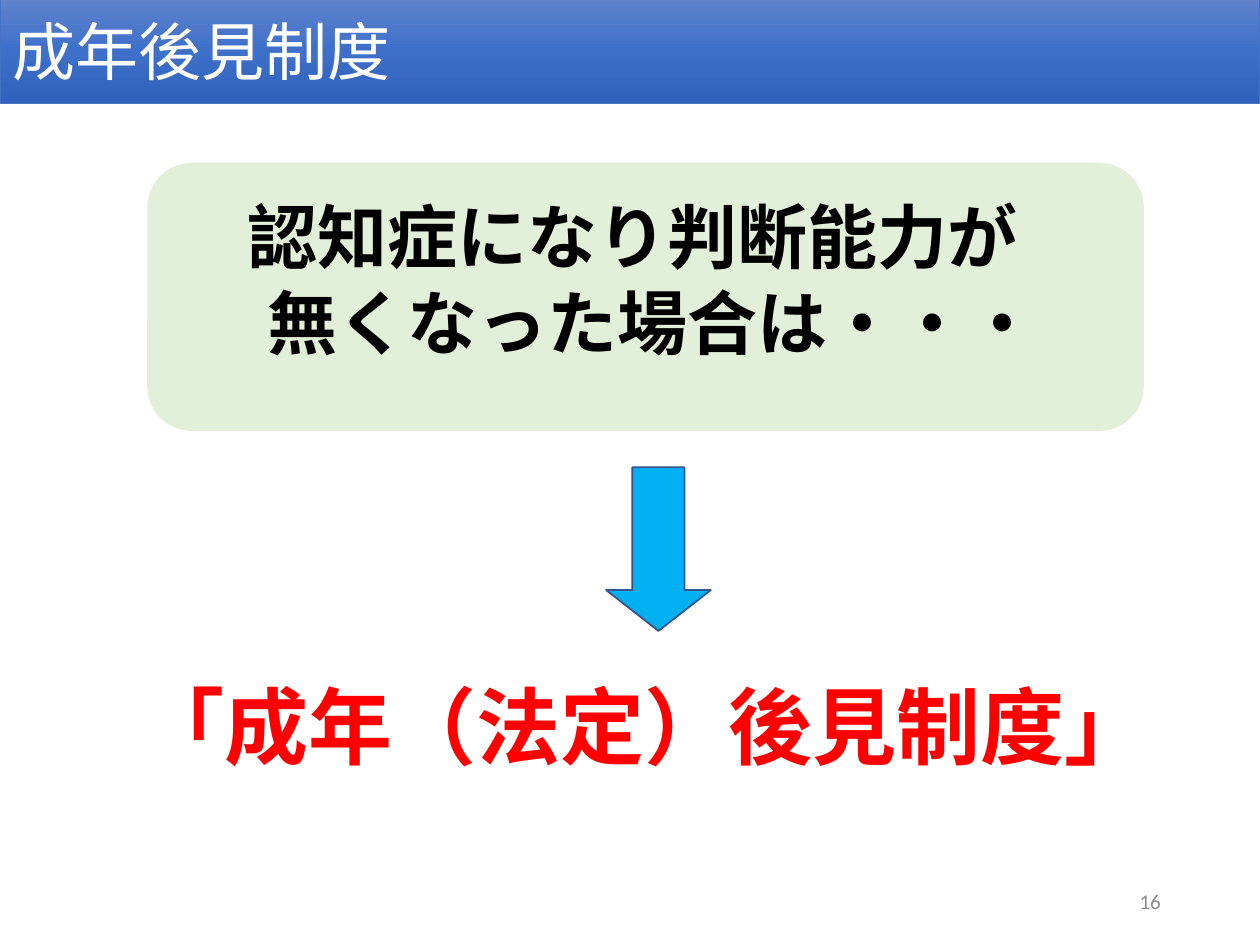
from copy import deepcopy

from pptx import Presentation
from pptx.dml.color import RGBColor
from pptx.enum.shapes import MSO_SHAPE as Shape
from pptx.enum.text import MSO_ANCHOR as Anchor, PP_ALIGN as Align
from pptx.oxml.ns import qn
from pptx.util import Cm, Pt

WHITE = RGBColor(0xFF, 0xFF, 0xFF)
BLACK = RGBColor(0x00, 0x00, 0x00)
RED = RGBColor(0xFF, 0x00, 0x00)
GRAY = RGBColor(0x8C, 0x8C, 0x8C)
PALE_GREEN = RGBColor(0xE2, 0xF0, 0xD9)
SKY_BLUE = RGBColor(0x00, 0xB0, 0xF0)
ARROW_EDGE = RGBColor(0x32, 0x54, 0x91)
TITLE_EDGE = RGBColor(0x44, 0x72, 0xC4)
TITLE_GRADIENT = [
    (0, RGBColor(0x61, 0x83, 0xCB)),
    (0.5, RGBColor(0x3E, 0x70, 0xCA)),
    (1, RGBColor(0x30, 0x62, 0xBB)),
]
JAPANESE_FONT = "Noto Sans CJK JP"

TITLE = "成年後見制度"
CONDITION = ["認知症になり判断能力が", "無くなった場合は・・・"]
CONDITION_INDENTS = [3.1, 3.5]
RESULT = "「成年（法定）後見制度」"
PAGE_NUMBER = "16"

# left, top, width, height in centimetres
TITLE_BOX = (0, -0.05, 25.4, 2.13)
PANEL_BOX = (2.97, 3.28, 20.09, 5.41)
CONDITION_BOX = (1.65, 3.58, 20.09, 5.11)
ARROW_BOX = (12.22, 9.42, 2.11, 3.3)
RESULT_BOX = (2.59, 13.46, 21.84, 2.31)
PAGE_BOX = (17.93, 17.65, 5.72, 1.02)


def add_shape(slide, preset, box, fill=None, line=None, line_width=1):
    shape = slide.shapes.add_shape(preset, *map(Cm, box))
    shape.shadow.inherit = False
    if fill is not None:
        shape.fill.solid()
        shape.fill.fore_color.rgb = fill
    if line is None:
        shape.line.fill.background()
    else:
        shape.line.color.rgb = line
        shape.line.width = Pt(line_width)
    return shape


def fill_with_gradient(shape, colours):
    """Fill from top to bottom with three colour stops."""
    shape.fill.gradient()
    shape.fill.gradient_angle = 270
    first_stop = shape._element.spPr.find(qn("a:gradFill")).find(qn("a:gsLst"))[0]
    first_stop.addnext(deepcopy(first_stop))
    for stop, (position, colour) in zip(shape.fill.gradient_stops, colours):
        stop.position = position
        stop.color.rgb = colour


def write_text(shape, lines, size, colour, font=JAPANESE_FONT, bold=False,
               align=Align.LEFT, anchor=Anchor.TOP, indents=None,
               line_spacing=1.0, gap=0, top_margin=0.13):
    frame = shape.text_frame
    frame.word_wrap = True
    frame.vertical_anchor = anchor
    frame.margin_top = Cm(top_margin)
    for index, line in enumerate(lines):
        paragraph = frame.add_paragraph() if index else frame.paragraphs[0]
        paragraph.alignment = align
        paragraph.line_spacing = line_spacing
        paragraph.space_before = Pt(gap if index else 0)
        if indents:
            properties = paragraph._p.get_or_add_pPr()
            properties.set("marL", str(Cm(indents[index])))
            properties.set("indent", "0")
        run = paragraph.add_run()
        run.text = line
        run.font.size = Pt(size)
        run.font.bold = bold
        run.font.color.rgb = colour
        run.font.name = font
        latin = run._r.rPr.find(qn("a:latin"))
        east_asian = latin.makeelement(qn("a:ea"), {"typeface": font})
        latin.addnext(east_asian)


def add_text(slide, box, lines, **text_format):
    write_text(slide.shapes.add_textbox(*map(Cm, box)), lines, **text_format)


def main():
    presentation = Presentation()
    presentation.slide_width, presentation.slide_height = Cm(25.4), Cm(19.05)
    slide = presentation.slides.add_slide(presentation.slide_layouts[6])

    add_shape(slide, Shape.ROUNDED_RECTANGLE, PANEL_BOX, fill=PALE_GREEN)
    add_text(slide, PAGE_BOX, [PAGE_NUMBER], size=12, colour=GRAY,
             font="Calibri", align=Align.RIGHT, anchor=Anchor.MIDDLE)

    title = add_shape(slide, Shape.RECTANGLE, TITLE_BOX,
                      line=TITLE_EDGE, line_width=0.5)
    fill_with_gradient(title, TITLE_GRADIENT)
    write_text(title, [TITLE], size=36, colour=WHITE, anchor=Anchor.MIDDLE)

    add_text(slide, CONDITION_BOX, CONDITION, size=40, colour=BLACK, bold=True,
             indents=CONDITION_INDENTS, line_spacing=0.9, gap=6, top_margin=0.52)
    add_text(slide, RESULT_BOX, [RESULT], size=48, colour=RED, bold=True)

    arrow = add_shape(slide, Shape.DOWN_ARROW, ARROW_BOX,
                      fill=SKY_BLUE, line=ARROW_EDGE)
    arrow.adjustments[1] = 0.39

    presentation.save("out.pptx")


if __name__ == "__main__":
    main()
